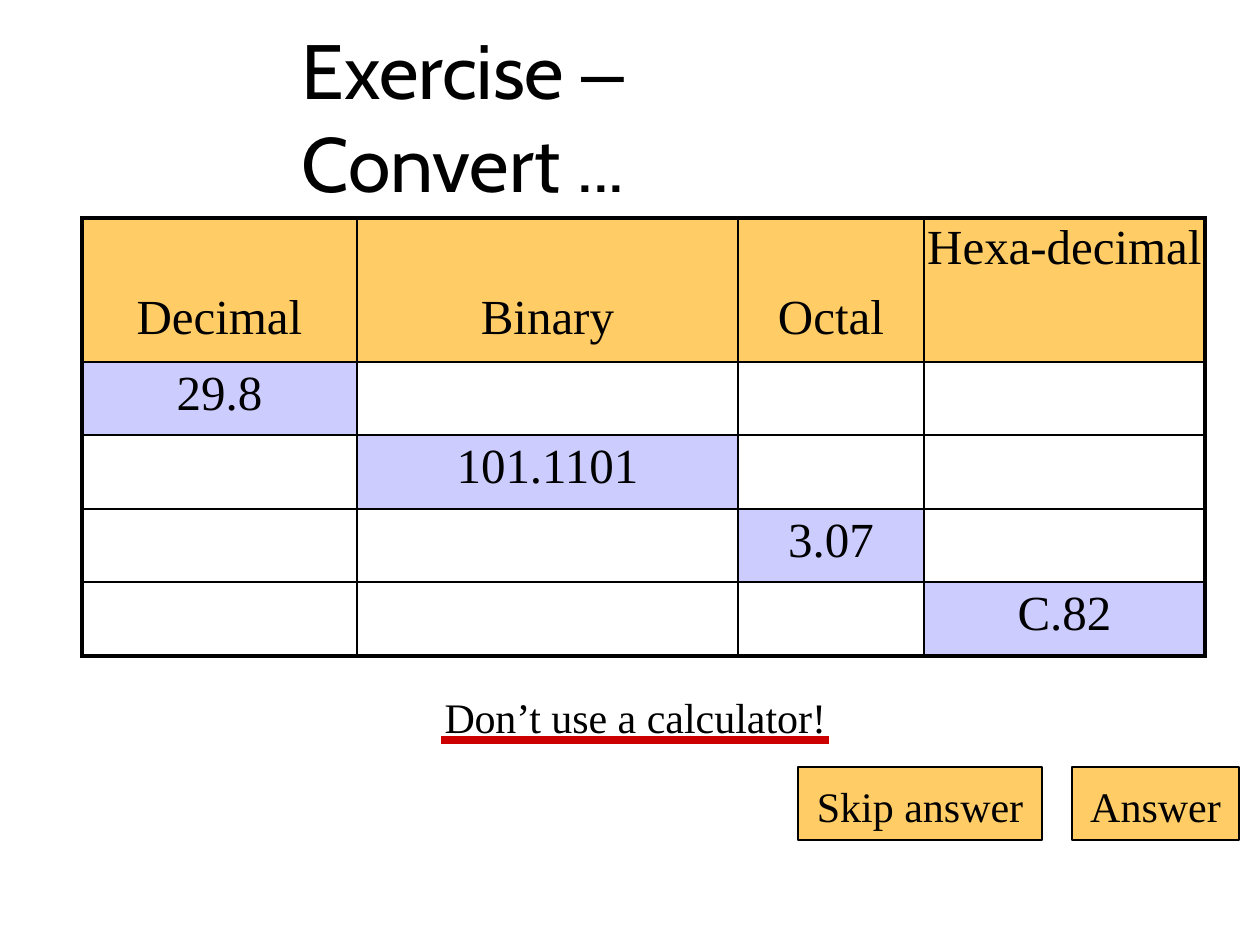
"""Build a number-base conversion exercise slide with a table and two buttons."""
from pptx import Presentation
from pptx.dml.color import RGBColor
from pptx.enum.shapes import MSO_CONNECTOR, MSO_SHAPE
from pptx.enum.text import MSO_ANCHOR, PP_ALIGN
from pptx.oxml.ns import qn
from pptx.util import Emu, Pt
from lxml.etree import SubElement
from dataclasses import dataclass


@dataclass(frozen=True)
class Theme:
    ink: RGBColor = RGBColor(0, 0, 0)
    accent: RGBColor = RGBColor(0xCC, 0, 0)
    header: RGBColor = RGBColor(0xFF, 0xCC, 0x66)
    given: RGBColor = RGBColor(0xCC, 0xCC, 0xFF)
    heading_font: str = "Cabin"
    dash_font: str = "Arial"
    body_font: str = "Times New Roman"
    heading_size: int = 44
    table_size: int = 28
    body_size: int = 24


theme = Theme()
PX = 914400 / 126


def px(length):
    return Emu(round(length * PX))


def write(frame, runs, size, top, alignment=PP_ALIGN.CENTER):
    frame.word_wrap = True
    frame.vertical_anchor = MSO_ANCHOR.TOP
    frame.margin_left = frame.margin_right = frame.margin_bottom = 0
    frame.margin_top = px(top)
    paragraph = frame.paragraphs[0]
    paragraph.alignment = alignment
    for text, font, spacing in runs:
        run = paragraph.add_run()
        run.text = text
        run.font.name = font
        run.font.size = Pt(size)
        run.font.color.rgb = theme.ink
        run.font._element.set("spc", str(spacing))


presentation = Presentation()
presentation.slide_width = px(1260)
presentation.slide_height = px(945)
slide = presentation.slides.add_slide(presentation.slide_layouts[6])

title = slide.shapes.add_textbox(px(302), px(20), px(655), px(96))
title_runs = [
    ("Exercise ", theme.heading_font, -10),
    ("– ", theme.dash_font, -250),
    ("Convert ", theme.heading_font, 0),
    ("...", theme.heading_font, -10),
]
write(title.text_frame, title_runs, theme.heading_size, 3, PP_ALIGN.LEFT)

reminder = slide.shapes.add_textbox(px(442), px(685), px(387), px(54))
reminder_runs = [("Don’t ", theme.body_font, -10), ("use a calculator!", theme.body_font, 0)]
write(reminder.text_frame, reminder_runs, theme.body_size, 6)

underline = slide.shapes.add_connector(MSO_CONNECTOR.STRAIGHT, px(441), px(740), px(829), px(740))
underline.line.color.rgb = theme.accent
underline.line.width = Pt(4.5)
SubElement(underline._element.spPr, qn("a:effectLst"))

headers = ["Decimal", "Binary", "Octal", "Hexa-decimal"]
given_values = ["29.8", "101.1101", "3.07", "C.82"]
column_widths = [275, 381, 186, 281]
row_heights = [144, 73, 74, 73, 74]
last_row, last_column = len(row_heights) - 1, len(column_widths) - 1
table = slide.shapes.add_table(
    len(row_heights), len(column_widths), px(82), px(218), px(sum(column_widths)), px(sum(row_heights))
).table
table.first_row = table.horz_banding = False
for column, width in zip(table.columns, column_widths):
    column.width = px(width)
for row, height in zip(table.rows, row_heights):
    row.height = px(height)

for row in range(last_row + 1):
    for column in range(last_column + 1):
        cell = table.cell(row, column)
        outer_sides = {"lnL": column == 0, "lnR": column == last_column, "lnT": row == 0, "lnB": row == last_row}
        properties = cell._tc.get_or_add_tcPr()
        for side, outer in outer_sides.items():
            border = SubElement(properties, qn(f"a:{side}"), w=str(Pt(2.25 if outer else 1)))
            SubElement(SubElement(border, qn("a:solidFill")), qn("a:srgbClr"), val=str(theme.ink))
        is_header, is_given = row == 0, row == column + 1
        if not (is_header or is_given):
            cell.fill.background()
            continue
        cell.fill.solid()
        cell.fill.fore_color.rgb = theme.header if is_header else theme.given
        cell.margin_left = cell.margin_right = cell.margin_bottom = 0
        cell.margin_top = px(73 if is_header and column < last_column else 5)
        paragraph = cell.text_frame.paragraphs[0]
        paragraph.alignment = PP_ALIGN.CENTER
        paragraph.line_spacing = 0.96 if is_header and column == last_column else 1.0
        run = paragraph.add_run()
        run.text = headers[column] if is_header else given_values[column]
        run.font.name = theme.body_font
        run.font.size = Pt(theme.table_size)
        run.font.color.rgb = theme.ink

for label, left, width in [("Skip answer", 798, 244), ("Answer", 1072, 167)]:
    button = slide.shapes.add_shape(MSO_SHAPE.RECTANGLE, px(left), px(767), px(width), px(73))
    button.shadow.inherit = False
    button.fill.solid()
    button.fill.fore_color.rgb = theme.header
    button.line.color.rgb = theme.ink
    button.line.width = Pt(1.5)
    write(button.text_frame, [(label, theme.body_font, 0)], theme.body_size, 14)

presentation.save("out.pptx")
